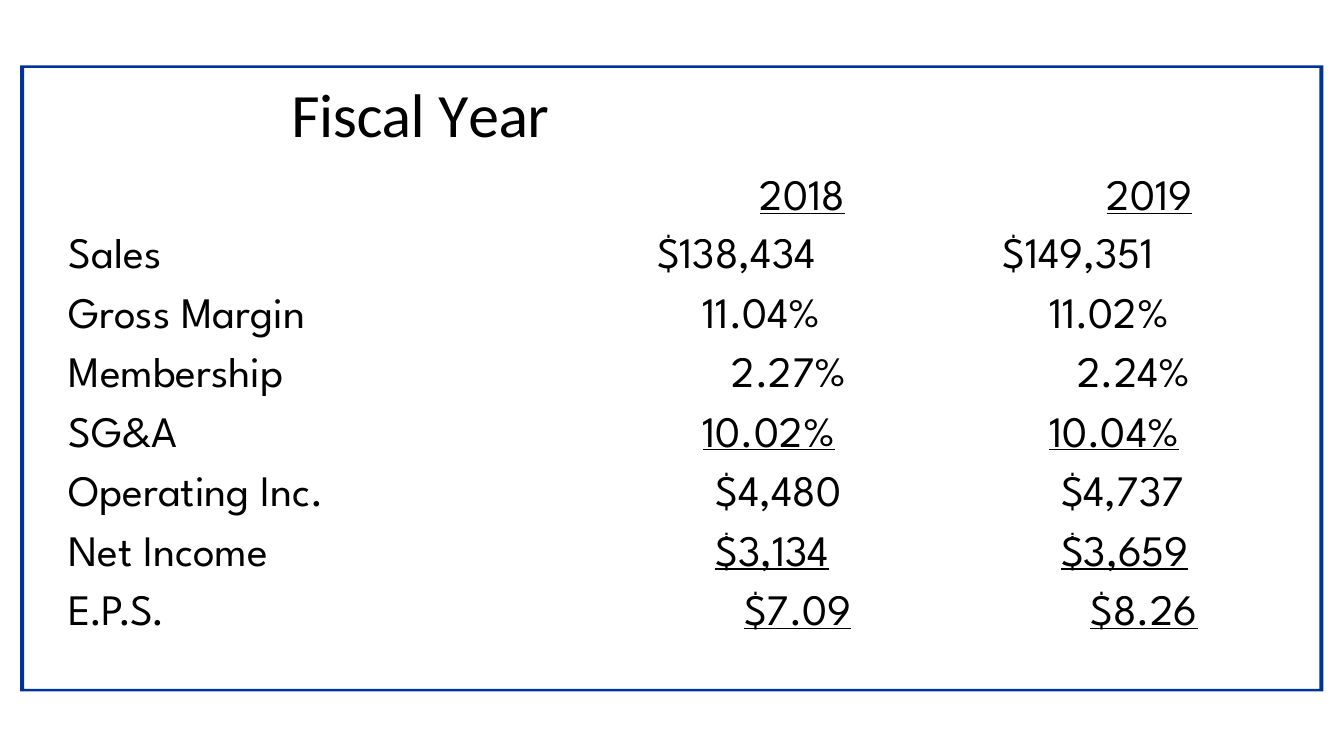
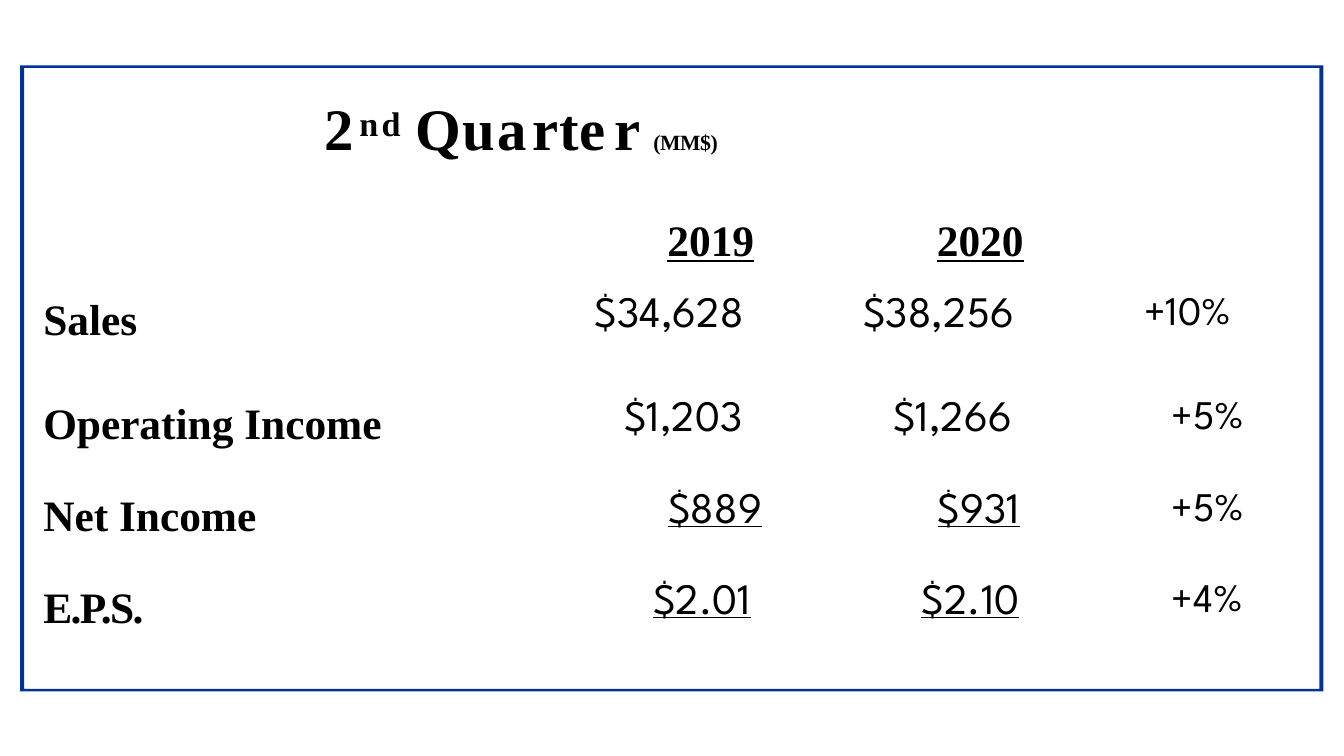
"""Build two slides of financial results, for the fiscal year and for the second quarter."""
from pptx import Presentation
from pptx.dml.color import RGBColor
from pptx.enum import text
from pptx.util import Cm, Pt

BLUE, BLACK = "003399", "000000"
SPARTAN, TIMES, CALIBRI = "League Spartan", "Times New Roman", "Calibri"


def colour(hex_string):
    return RGBColor.from_string(hex_string)


def set_font(paragraph, name, size, bold=False, underline=False):
    font = paragraph.font
    font.name, font.size, font.bold, font.underline = name, Pt(size), bold, underline
    font.color.rgb = colour(BLACK)
    paragraph.alignment = text.PP_ALIGN.LEFT


slides = [
    {
        "title_box": (2.34, 1.9, 29.21, 1.88),
        "title_insets": (5, 0),
        "title_font": (CALIBRI, 44, False),
        "title_runs": [("Fiscal ", -0.3, None, 0), ("Y", -3.4, None, 0), ("ear", -0.4, None, 0)],
        "heading_font": (SPARTAN, False),
        "table_at": (1.63, 4.55),
        "columns": (12.9, 10.03, 7.72),
        "rows": [
            (1.45, True, ("", "2018", "2019"), (0.1, 4.62, 3.33)),
            (1.5, False, ("Sales", "$138,434", "$149,351"), (0.1, 2.03, 0.71)),
            (1.5, False, ("Gross Margin", "11.04%", "11.02%"), (0.1, 3.18, 1.88)),
            (1.5, False, ("Membership", "2.27%", "2.24%"), (0.1, 3.91, 2.59)),
            (1.5, True, ("SG&A", "10.02%", "10.04%"), (0.1, 3.18, 1.88)),
            (1.5, False, ("Operating Inc.", "$4,480", "$4,737"), (0.1, 3.5, 2.18)),
            (1.5, True, ("Net Income", "$3,134", "$3,659"), (0.1, 3.5, 2.18)),
            (1.45, True, ("E.P.S.", "$7.09", "$8.26"), (0.1, 4.22, 2.92)),
        ],
    },
    {
        "title_box": (2.34, 1.6, 29.21, 2.51),
        "title_insets": (5.84, 0.71),
        "title_font": (TIMES, 42, True),
        "title_runs": [("2", 3.9, None, 0), ("nd ", 2.3, None, 25), ("Qu", 1.2, None, 0),
                       ("a", 4, None, 0), ("rt", 0.6, None, 0), ("e", 6, None, 0),
                       ("r ", -0.4, None, 0), ("(MM$)", -0.3, 15.5, 0)],
        "heading_font": (TIMES, True),
        "table_at": (0.84, 5.49),
        "columns": (13.82, 6.71, 6.93, 4.7),
        "rows": [
            (2, True, ("", "2019", "2020", ""), (0.25, 2.16, 2.24, 0)),
            (2.62, False, ("Sales", "$34,628", "$38,256", "+10%"), (0.25, 0.33, 0.38, 0.53)),
            (2.31, False, ("Operating Income", "$1,203", "$1,266", "+5%"), (0.25, 1.07, 1.14, 1.22)),
            (2.31, True, ("Net Income", "$889", "$931", "+5%"), (0.25, 2.18, 2.26, 1.22)),
            (2.31, True, ("E.P.S.", "$2.01", "$2.10", "+4%"), (0.25, 1.8, 1.85, 1.22)),
        ],
    },
]

presentation = Presentation()
presentation.slide_width, presentation.slide_height = Cm(33.87), Cm(19.05)

for content in slides:
    slide = presentation.slides.add_slide(presentation.slide_layouts[5])

    left, top, right, bottom = 0.51, 1.65, 33.35, 17.42
    builder = slide.shapes.build_freeform(Cm(left), Cm(top))
    builder.add_line_segments([(Cm(x), Cm(y)) for x, y in
                               ((right, top), (right, bottom), (left, bottom))])
    left, top, right, bottom = left + 0.1, top + 0.06, right - 0.1, bottom - 0.06
    builder.move_to(Cm(left), Cm(top))
    builder.add_line_segments([(Cm(x), Cm(y)) for x, y in
                               ((left, bottom), (right, bottom), (right, top))])
    frame = builder.convert_to_shape()
    frame.shadow.inherit = False
    frame.fill.solid()
    frame.fill.fore_color.rgb = colour(BLUE)
    frame.line.fill.background()

    title = slide.shapes.title
    title.left, title.top, title.width, title.height = map(Cm, content["title_box"])
    title_frame = title.text_frame
    title_frame.margin_left, title_frame.margin_top = map(Cm, content["title_insets"])
    title_frame.margin_right = title_frame.margin_bottom = 0
    title_frame.vertical_anchor = text.MSO_ANCHOR.MIDDLE
    title_frame.auto_size = text.MSO_AUTO_SIZE.SHAPE_TO_FIT_TEXT
    paragraph = title_frame.paragraphs[0]
    set_font(paragraph, *content["title_font"])
    for words, spacing, size, raised in content["title_runs"]:
        run = paragraph.add_run()
        run.text = words
        if size:
            run.font.size = Pt(size)
        properties = run._r.get_or_add_rPr()
        properties.set("spc", str(round(spacing * 100)))
        if raised:
            properties.set("baseline", str(raised * 1000))

    columns, rows = content["columns"], content["rows"]
    table_left, table_top = map(Cm, content["table_at"])
    table = slide.shapes.add_table(len(rows), len(columns), table_left, table_top,
                                   Cm(sum(columns)), Cm(sum(row[0] for row in rows))).table
    table.first_row = table.horz_banding = False
    for column, width in zip(table.columns, columns):
        column.width = Cm(width)
    for row_index, (height, underlined, values, indents) in enumerate(rows):
        table.rows[row_index].height = Cm(height)
        for column_index, (value, indent) in enumerate(zip(values, indents)):
            cell = table.cell(row_index, column_index)
            cell.fill.background()
            cell.margin_left = Cm(indent)
            cell.margin_top = cell.margin_right = cell.margin_bottom = 0
            paragraph = cell.text_frame.paragraphs[0]
            paragraph.text = value
            is_heading = row_index == 0 or column_index == 0
            name, bold = content["heading_font"] if is_heading else (SPARTAN, False)
            size = 29 if column_index == 3 else 31
            set_font(paragraph, name, size, bold, underlined and column_index in (1, 2))
            if value == "E.P.S.":
                paragraph.runs[0]._r.get_or_add_rPr().set("spc", "-110")

presentation.save("out.pptx")
